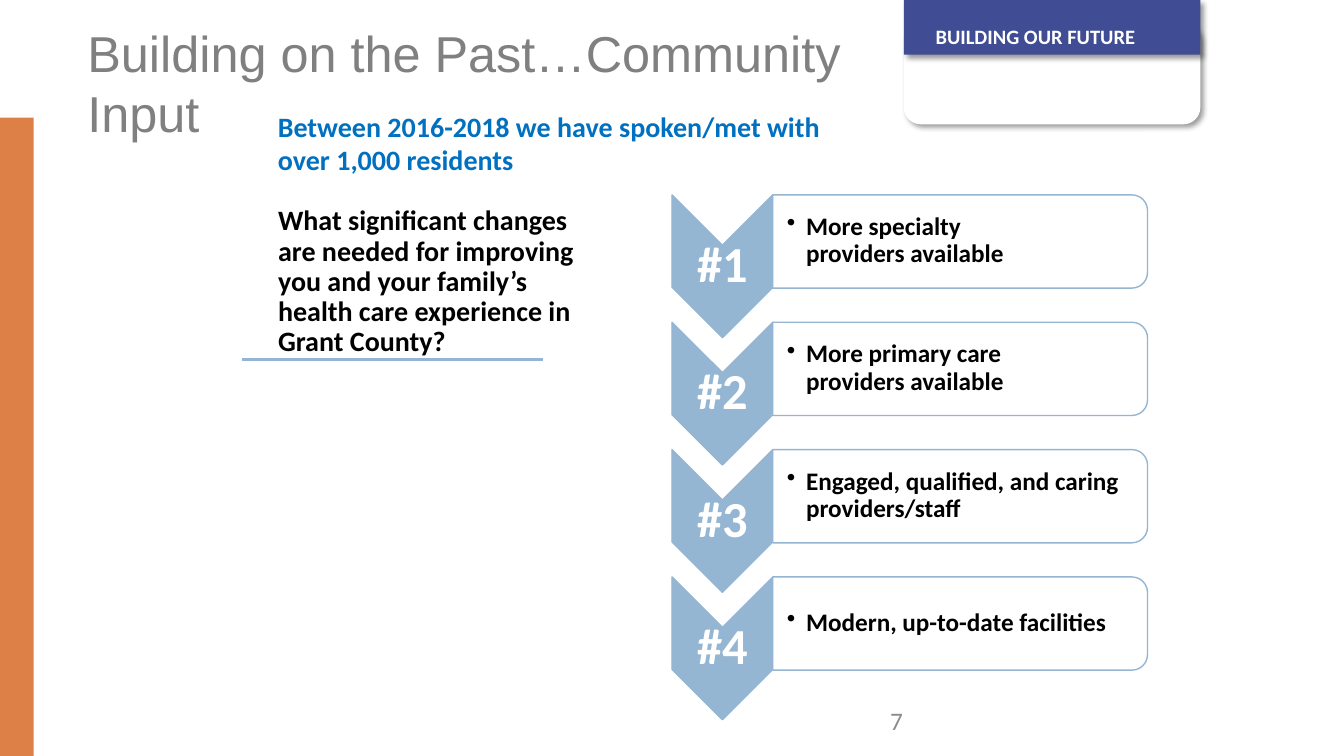
from lxml.etree import SubElement
from pptx import Presentation
from pptx.dml.color import RGBColor
from pptx.enum.shapes import MSO_CONNECTOR as Link, MSO_SHAPE as Form
from pptx.enum.text import MSO_ANCHOR as Anchor, MSO_AUTO_SIZE as Fit, PP_ALIGN as Align
from pptx.oxml.ns import qn
from pptx.util import Inches, Pt

COLORS = {
    "orange": "DD8047", "sky": "94B6D2", "navy": "404C93", "blue": "0070C0",
    "white": "FFFFFF", "black": "000000", "gray": "808080", "pale": "8C8C8C",
}
WIDTH, HEIGHT = 13.33, 7.5
COLUMNS, ROWS = 160, 90

# Text formats: font, paragraph and frame settings
BOLD = {"name": "Calibri", "bold": True}
TIGHT = {"line_spacing": 0.9}
NUMBER_FRAME = {"vertical_anchor": Anchor.MIDDLE, **dict.fromkeys(
    ("margin_left", "margin_top", "margin_right", "margin_bottom"), Inches(0.03))}
PRIORITY_FRAME = {"vertical_anchor": Anchor.MIDDLE, "margin_left": Inches(0.14), **dict.fromkeys(
    ("margin_top", "margin_right", "margin_bottom"), Inches(0.01))}

PRIORITIES = [
    "More specialty \vproviders available",
    "More primary care \vproviders available",
    "Engaged, qualified, and caring providers/staff",
    "Modern, up-to-date facilities",
]
FIRST_ROW, PITCH = 23, 15.16


def rgb(color):
    return RGBColor.from_string(COLORS[color])


def apply(target, settings):
    for key, value in settings.items():
        setattr(target, key, value)


class SlideBuilder:
    """Places styled elements on a grid of COLUMNS by ROWS."""

    def __init__(self, deck):
        self.slide = deck.slides.add_slide(deck.slide_layouts[1])
        self.shapes = self.slide.shapes

    def box(self, column, row, columns, rows):
        across, down = WIDTH / COLUMNS, HEIGHT / ROWS
        return [Inches(n) for n in (column * across, row * down, columns * across, rows * down)]

    def shape(self, form, place, fill, line=None, turned=False, alpha=None, shadow=False):
        column, row, columns, rows = place
        if turned:  # place is the outline seen after a quarter turn
            column, row = column + (columns - rows) / 2, row + (rows - columns) / 2
            columns, rows = rows, columns
        item = self.shapes.add_shape(form, *self.box(column, row, columns, rows))
        item.rotation = 90 if turned else 0
        item.shadow.inherit = False
        item.fill.solid()
        item.fill.fore_color.rgb = rgb(fill)
        properties = item._element.spPr
        if alpha:
            tint = properties.find(qn("a:solidFill"))[0]
            SubElement(tint, qn("a:alpha"), val=str(alpha * 1000))
        if line:
            item.line.color.rgb = rgb(line)
            item.line.width = Pt(1)
        else:
            item.line.fill.background()
        if shadow:
            effects = properties.find(qn("a:effectLst"))
            outer = SubElement(effects, qn("a:outerShdw"), blurRad=str(Pt(4)), dist=str(Pt(3)),
                               dir="2700000", algn="tl", rotWithShape="0")
            shade = SubElement(outer, qn("a:srgbClr"), val=COLORS["black"])
            SubElement(shade, qn("a:alpha"), val="40000")

    def rule(self, start, row, end):
        left, top, span, _ = self.box(start, row, end - start, 0)
        link = self.shapes.add_connector(Link.STRAIGHT, left, top, left + span, top)
        link.line.color.rgb = rgb("sky")
        link.line.width = Pt(1.5)
        SubElement(link._element.spPr, qn("a:effectLst"))

    def set_text(self, holder, words, size, color, font=BOLD, paragraph=None, frame=None,
                 bullet=None):
        text = holder.text_frame
        apply(text, {"word_wrap": True, "auto_size": Fit.NONE,
                     "vertical_anchor": Anchor.TOP, **(frame or {})})
        text.text = words
        line = text.paragraphs[0]
        apply(line, {"alignment": Align.LEFT, "space_before": Pt(0), **(paragraph or {})})
        props = line._p.get_or_add_pPr()
        hang = Inches(0.19) if bullet else 0
        props.set("marL", str(hang))
        props.set("indent", str(-hang))
        if bullet:
            SubElement(props, qn("a:buChar"), char=bullet)
        else:
            SubElement(props, qn("a:buNone"))
        for run in line.runs:
            apply(run.font, {"size": Pt(size), **font})
            run.font.color.rgb = rgb(color)

    def text(self, place, words, size, color, **formats):
        self.set_text(self.shapes.add_textbox(*self.box(*place)), words, size, color, **formats)

    def placeholder(self, index, place, words, size, color, **formats):
        holder = self.slide.placeholders[index]
        apply(holder, dict(zip(("left", "top", "width", "height"), self.box(*place))))
        self.set_text(holder, words, size, color, **formats)


def main():
    deck = Presentation()
    deck.slide_width, deck.slide_height = Inches(WIDTH), Inches(HEIGHT)
    page = SlideBuilder(deck)

    # Side bar, title and question
    page.shape(Form.RECTANGLE, (0, 14, 4, 76), "orange")
    page.placeholder(0, (9.2, 2, 98.4, 23), "Building on the Past…Community Input", 36, "gray",
                     font={"name": "Arial", "bold": False})
    page.placeholder(1, (31.9, 24, 38.8, 21),
                     "What significant changes are needed for improving you and your "
                     "family’s health care experience in Grant County?",
                     20, "black", paragraph=TIGHT)
    page.rule(28.8, 42.8, 64.6)
    page.text((31.9, 12.4, 72.6, 9.2),
              "Between 2016-2018 we have spoken/met with over 1,000 residents", 20, "blue")

    # Ranked priorities: chevron and panel in each row
    for rank, priority in enumerate(PRIORITIES):
        row = FIRST_ROW + rank * PITCH
        page.shape(Form.CHEVRON, (80, row + 0.2, 12, 17), "sky", "sky", turned=True)
        page.text((80, row + 6.1, 12, 5.2), f"#{rank + 1}", 36, "white",
                  paragraph={**TIGHT, "alignment": Align.CENTER}, frame=NUMBER_FRAME)
        page.shape(Form.ROUND_2_SAME_RECTANGLE, (92, row + 0.2, 44.6, 11.1), "white", "sky",
                   turned=True, alpha=90)
        page.text((92, row + 0.7, 44, 10), priority, 18, "black",
                  paragraph=TIGHT, frame=PRIORITY_FRAME, bullet="•")

    # Banner card
    page.shape(Form.ROUNDED_RECTANGLE, (107.6, 2.8, 35.3, 12), "white", shadow=True)
    page.shape(Form.RECTANGLE, (107.6, 0, 35.3, 6.5), "navy", shadow=True)
    page.text((110.2, 0, 35, 6.4), "BUILDING OUR FUTURE", 14.6, "white",
              paragraph=TIGHT, frame={"vertical_anchor": Anchor.BOTTOM})

    # Page number
    page.text((104.8, 83.4, 27, 4.8), "7", 18, "pale", font={"name": "Calibri", "bold": False})

    deck.save("out.pptx")


if __name__ == "__main__":
    main()
